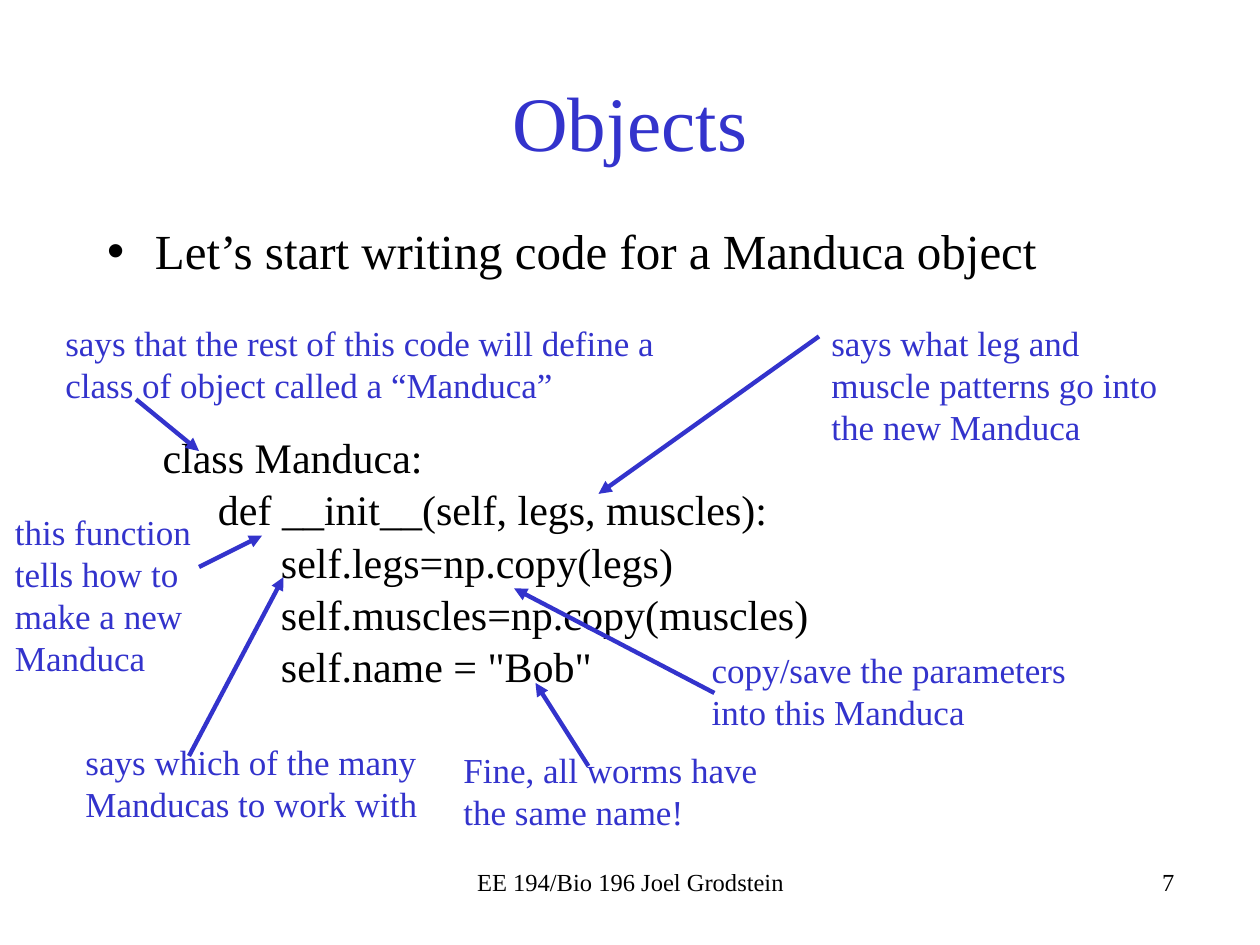
from lxml import etree
from pptx import Presentation
from pptx.dml.color import RGBColor
from pptx.enum.shapes import MSO_CONNECTOR
from pptx.enum.text import MSO_ANCHOR, MSO_AUTO_SIZE, PP_ALIGN
from pptx.oxml.ns import qn
from pptx.util import Inches, Pt

STRAIGHT = MSO_CONNECTOR.STRAIGHT
TOP, MIDDLE = MSO_ANCHOR.TOP, MSO_ANCHOR.MIDDLE
LEFT, CENTER, RIGHT = PP_ALIGN.LEFT, PP_ALIGN.CENTER, PP_ALIGN.RIGHT
FIXED = MSO_AUTO_SIZE.NONE

COLORS = {"ink": "000000", "note": "3333CC"}
FACE = "Times New Roman"
TITLE = "Objects"
LEAD = "Let’s start writing code for a Manduca object"
CODE = [
    (1, "class Manduca:"),
    (2, "def __init__(self, legs, muscles):"),
    (3, "self.legs=np.copy(legs)"),
    (3, "self.muscles=np.copy(muscles)"),
    (3, 'self.name = "Bob"'),
]
INDENTS = {1: 0.44, 2: 0.88, 3: 1.38}
CODE_GAP, BLOCK_GAP = 4, 90
NOTES = [
    ("says that the rest of this code will define a class of object called a “Manduca”",
     (0.42, 2.5, 5.08, 0.77), (1.08, 3.17), (1.58, 3.58)),
    ("this function tells how to make a new Manduca",
     (0.02, 4, 1.86, 1.45), (1.58, 4.5), (2.08, 4.25)),
    ("says what leg and muscle patterns go into the new Manduca",
     (6.5, 2.5, 2.93, 1.11), (6.5, 2.67), (4.75, 3.92)),
    ("says which of the many Manducas to work with",
     (0.58, 5.83, 2.98, 0.77), (1.5, 6), (2.25, 4.58)),
    ("copy/save the parameters into this Manduca",
     (5.55, 5.1, 3.2, 0.79), (5.67, 5.5), (4.08, 4.67)),
    ("Fine, all worms have the same name!",
     (3.58, 5.89, 2.66, 0.77), (4.67, 6.08), (4.25, 5.42)),
]
FOOTERS = [
    ("EE 194/Bio 196 Joel Grodstein", 3.42, CENTER),
    ("7", 6.25, RIGHT),
]


def place(shape, box):
    for name, value in zip(("left", "top", "width", "height"), box):
        setattr(shape, name, Inches(value))


def setup(frame, anchor=TOP):
    values = {"word_wrap": True, "auto_size": FIXED, "vertical_anchor": anchor}
    for name, value in values.items():
        setattr(frame, name, value)


def write(para, text, size, color, align=LEFT):
    para.alignment = align
    run = para.add_run()
    run.text = text
    for name, value in {"size": Pt(size), "name": FACE}.items():
        setattr(run.font, name, value)
    run.font.color.rgb = RGBColor.from_string(COLORS[color])


def indent(para, left, hang=0, bullet=None):
    props = para._p.get_or_add_pPr()
    props.set("marL", str(Inches(left)))
    props.set("indent", str(-Inches(hang)))
    if bullet:
        etree.SubElement(props, qn("a:buChar")).set("char", bullet)
    else:
        etree.SubElement(props, qn("a:buNone"))


def label(slide, text, box, size, color, align=LEFT):
    shape = slide.shapes.add_textbox(*map(Inches, box))
    setup(shape.text_frame)
    write(shape.text_frame.paragraphs[0], text, size, color, align)


def arrow(slide, start, end):
    link = slide.shapes.add_connector(STRAIGHT, *map(Inches, start + end))
    link.line.width = Pt(2.5)
    link.line.color.rgb = RGBColor.from_string(COLORS["note"])
    etree.SubElement(link.line._get_or_add_ln(), qn("a:tailEnd")).set("type", "triangle")
    etree.SubElement(link._element.spPr, qn("a:effectLst"))


def fill_body(body):
    place(body, (0.75, 1.75, 7.92, 4.83))
    frame = body.text_frame
    setup(frame)
    lead = frame.paragraphs[0]
    write(lead, LEAD, 28, "ink")
    lead.line_spacing, lead.space_before = 0.9, Pt(5)
    indent(lead, 0.38, 0.38, "•")
    for row, (level, text) in enumerate(CODE):
        para = frame.add_paragraph()
        para.level = level
        write(para, text, 24, "ink")
        para.line_spacing = 0.9
        para.space_before = Pt(CODE_GAP if row else BLOCK_GAP)
        indent(para, INDENTS[level])


def main():
    deck = Presentation()
    deck.slide_width, deck.slide_height = Inches(10), Inches(7.5)
    slide = deck.slides.add_slide(deck.slide_layouts[1])
    title, body = slide.placeholders
    place(title, (0.75, 0.33, 8.5, 1.25))
    setup(title.text_frame, MIDDLE)
    write(title.text_frame.paragraphs[0], TITLE, 44, "note", CENTER)
    fill_body(body)
    for text, left, align in FOOTERS:
        label(slide, text, (left, 6.83, 3.17, 0.5), 14, "ink", align)
    for text, box, start, end in NOTES:
        label(slide, text, box, 20, "note")
        arrow(slide, start, end)
    deck.save("out.pptx")


if __name__ == "__main__":
    main()
